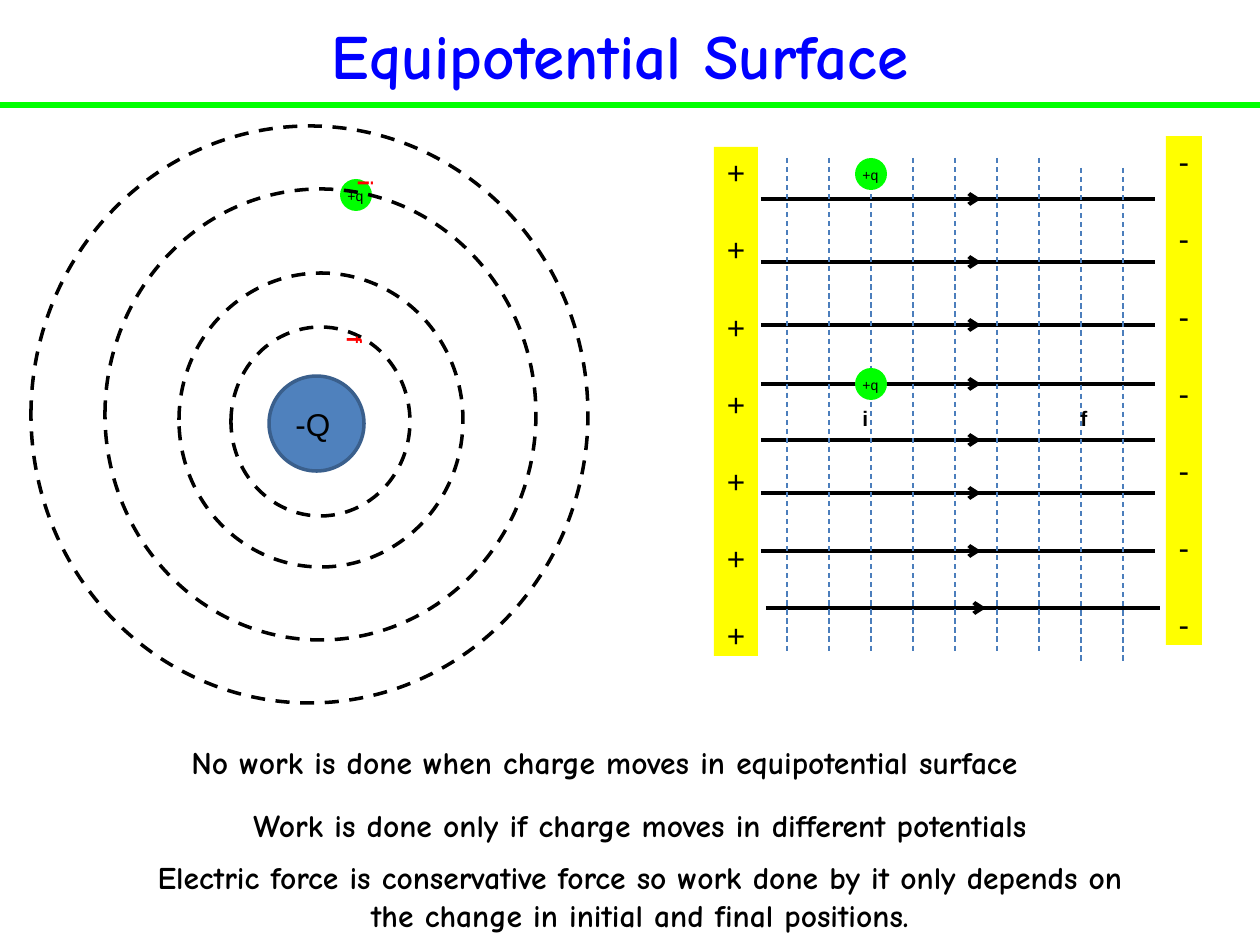
from lxml import etree
from pptx import Presentation
from pptx.dml.color import RGBColor
from pptx.enum.dml import MSO_LINE
from pptx.enum.shapes import MSO_CONNECTOR, MSO_SHAPE
from pptx.enum.text import MSO_ANCHOR, PP_ALIGN
from pptx.oxml.ns import qn
from pptx.util import Emu, Pt

DASH = MSO_LINE.DASH
STRAIGHT = MSO_CONNECTOR.STRAIGHT
RECT, OVAL = MSO_SHAPE.RECTANGLE, MSO_SHAPE.OVAL
TOP = MSO_ANCHOR.TOP
LEFT, CENTER = PP_ALIGN.LEFT, PP_ALIGN.CENTER

THEME = {
    "title": "0000FF", "rule": "00FF00", "ink": "000000", "plate": "FFFF00",
    "charge": "00FF00", "source": "4F81BD", "source_edge": "3A5F8C",
    "equipotential": "4B7EBC", "mark": "FF0000",
    "head_font": "Comic Neue", "label_font": "Arial",
    "title_size": 36, "text_size": 18, "mark_size": 12, "charge_size": 8,
}

TITLE = "Equipotential Surface"
STATEMENTS = [
    ("No work is done when charge moves in equipotential surface",
     (179, 737, 1008, 50), LEFT),
    ("Work is done only if charge moves in different potentials",
     (136, 800, 1008, 50), CENTER),
    ("Electric force is conservative force so work done by it only depends on "
     "the change in initial and final positions.",
     (136, 852, 1008, 89), CENTER),
]
PLATES = [("+", (714, 147, 44, 509)), ("-", (1166, 136, 36, 509))]
SIGNS_PER_PLATE = 7
SIGN_GAP = 22.5
FIELD_LINES = [(761, 199), (761, 262), (761, 325), (761, 384),
               (761, 440), (761, 493), (761, 551), (766, 608)]
EQUIPOTENTIALS = [158] * 7 + [168] * 2
RINGS = [(231, 327, 179, 189), (179, 273, 284, 294),
         (105, 189, 431, 451), (31, 126, 557, 577)]
SOURCE = (269, 376, 95, 95)
CHARGES = [(855, 158), (855, 368), (340, 179)]
MARKS = [("i", (850, 399), "ink", 0), ("f", (1068, 399), "ink", 0),
         ("i", (350, 165), "mark", 90), ("f", (339, 321), "mark", 90)]


def px(n):
    return Emu(round(n * 914400 / 126))


def rgb(name):
    return RGBColor.from_string(THEME[name])


def write(sp, text, size="text_size", font="label_font", color="ink",
          bold=False, align=LEFT, wrap=False, gap=0):
    tf = sp.text_frame
    tf.word_wrap = wrap
    tf.vertical_anchor = TOP
    for i, line in enumerate(text.split("\n")):
        p = tf.add_paragraph() if i else tf.paragraphs[0]
        p.alignment = align
        p.space_before = Pt(gap if i else 0)
        r = p.add_run()
        r.text = line
        r.font.name = THEME[font]
        r.font.size = Pt(THEME[size])
        r.font.bold = bold
        r.font.color.rgb = rgb(color)


def add_text(s, text, box, **fmt):
    sp = s.shapes.add_textbox(*map(px, box))
    write(sp, text, **fmt)
    return sp


def add_shape(s, kind, box, fill=None, line=None, dash=None):
    sp = s.shapes.add_shape(kind, *map(px, box))
    sp.shadow.inherit = False
    if fill:
        sp.fill.solid()
        sp.fill.fore_color.rgb = rgb(fill)
    else:
        sp.fill.background()
    if line:
        sp.line.color.rgb = rgb(line)
        sp.line.width = Pt(2)
        sp.line.dash_style = dash
    else:
        sp.line.fill.background()
    return sp


def add_line(s, ends, color, width, dash=None, arrow=False):
    sp = s.shapes.add_connector(STRAIGHT, *map(px, ends))
    sp.line.color.rgb = rgb(color)
    sp.line.width = Pt(width)
    sp.line.dash_style = dash
    if arrow:
        etree.SubElement(sp.line._get_or_add_ln(), qn("a:tailEnd"), type="arrow")
    etree.SubElement(sp._element.spPr, qn("a:effectLst"))


def main():
    prs = Presentation()
    prs.slide_width, prs.slide_height = px(1260), px(945)
    s = prs.slides.add_slide(prs.slide_layouts[5])

    add_line(s, (0, 105, 1260, 105), "rule", 3)
    title = s.shapes.title
    title.left, title.top, title.width, title.height = map(px, (53, 10, 1134, 141))
    write(title, TITLE, size="title_size", font="head_font", color="title",
          bold=True, align=CENTER, wrap=True)

    for x, y in FIELD_LINES:
        add_line(s, (x, y, x + 220, y), "ink", 2.25, arrow=True)
        add_line(s, (x + 215, y, x + 394, y), "ink", 2.25)
    for sign, box in PLATES:
        plate = add_shape(s, RECT, box, fill="plate")
        write(plate, "\n".join([sign] * SIGNS_PER_PLATE), align=CENTER, gap=SIGN_GAP)
    for i, y in enumerate(EQUIPOTENTIALS):
        x = 787 + 42 * i
        add_line(s, (x, y, x, y + 493), "equipotential", 0.75, dash=DASH)

    for x, y in CHARGES:
        add_shape(s, OVAL, (x, y, 32, 32), fill="charge")
        add_text(s, "+q", (x - 5, y + 2, 42, 29), size="charge_size")
    for box in RINGS:
        add_shape(s, OVAL, box, line="ink", dash=DASH)
    add_shape(s, OVAL, SOURCE, fill="source", line="source_edge")
    add_text(s, "-Q", (283, 399, 60, 50))
    for text, (x, y), color, angle in MARKS:
        sp = add_text(s, text, (x, y, 32, 38), size="mark_size", color=color, bold=True)
        sp.rotation = angle

    for text, box, align in STATEMENTS:
        add_text(s, text, box, font="head_font", bold=True, align=align, wrap=True)
    prs.save("out.pptx")


if __name__ == "__main__":
    main()
